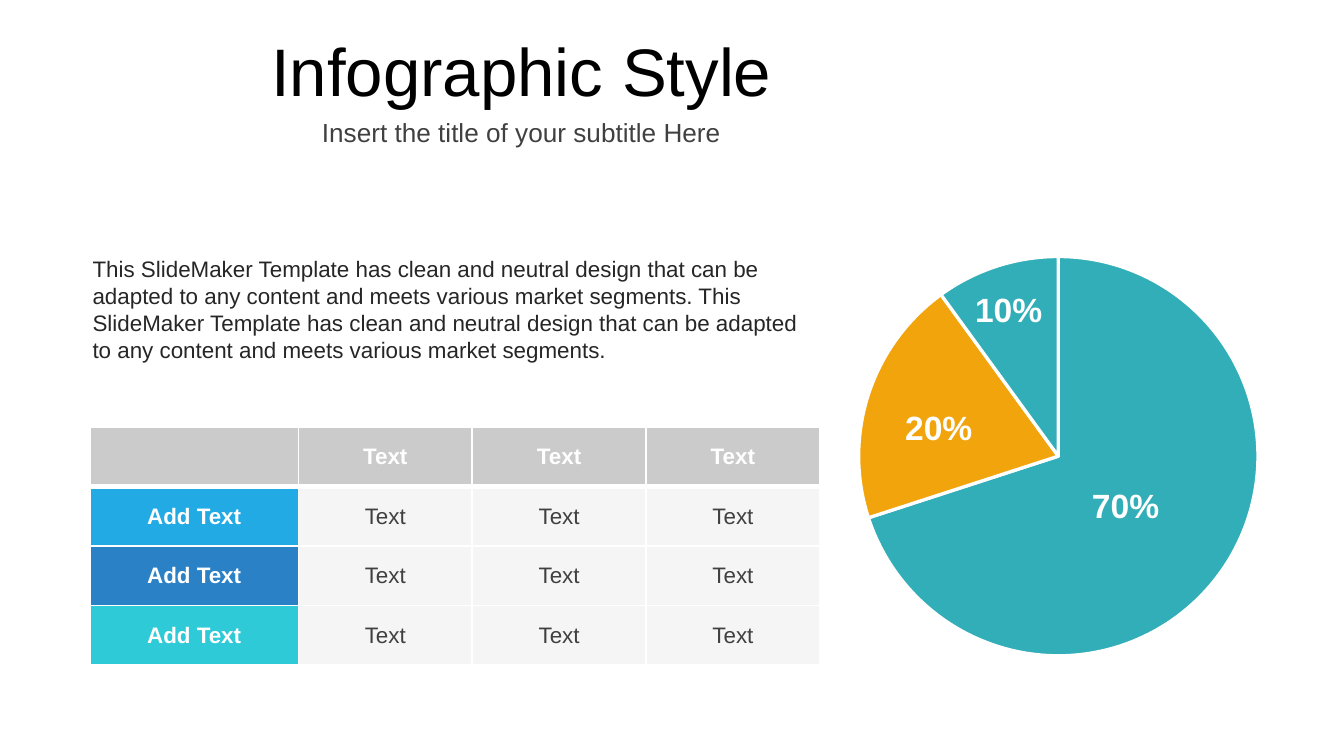
"""Build an infographic slide with a heading, a paragraph, a table and a pie chart."""
from lxml import etree
from pptx import Presentation
from pptx.chart.data import CategoryChartData
from pptx.dml.color import RGBColor
from pptx.enum.chart import XL_CHART_TYPE
from pptx.enum.text import MSO_ANCHOR, MSO_AUTO_SIZE, PP_ALIGN
from pptx.oxml import parse_xml
from pptx.oxml.ns import nsdecls, qn
from pptx.util import Inches, Pt

CENTER, LEFT = PP_ALIGN.CENTER, PP_ALIGN.LEFT
MIDDLE, TOP = MSO_ANCHOR.MIDDLE, MSO_ANCHOR.TOP
NO_FIT = MSO_AUTO_SIZE.NONE
PIE = XL_CHART_TYPE.PIE

THEME = {
    "font": "Arial", "title": 36, "subtitle": 14, "body": 12, "label": 18,
    "black": "000000", "dark": "262626", "gray": "404040", "white": "FFFFFF",
    "header": "CBCBCB", "cell": "F5F5F5",
    "row_heads": ["22AAE4", "2A81C6", "2ECAD7"],
    "slices": ["32AEB8", "F2A40D", "32AEB8"],
}

TITLE = "Infographic Style"
SUBTITLE = "Insert the title of your subtitle Here"
SENTENCE = ("This SlideMaker Template has clean and neutral design that can be "
            "adapted to any content and meets various market segments.")
PARAGRAPH = f"{SENTENCE} {SENTENCE}"
TABLE = [["", "Text", "Text", "Text"]] + [["Add Text", "Text", "Text", "Text"]] * 3
SHARES = [70, 20, 10]
LABEL_PLACES = [(7.99, 3.56), (6.6, 2.98), (7.12, 2.1)]


def color(name):
    return RGBColor.from_string(THEME.get(name, name))


def write(frame, text, size, ink, bold=False, align=CENTER):
    frame.text = text
    para = frame.paragraphs[0]
    para.alignment = align
    for span in para.runs:
        span.font.name = THEME["font"]
        span.font.size = Pt(THEME[size])
        span.font.bold = bold
        span.font.color.rgb = color(ink)


def place(box, left, top, width, height, anchor=MIDDLE):
    box.left, box.top = Inches(left), Inches(top)
    box.width, box.height = Inches(width), Inches(height)
    frame = box.text_frame
    frame.word_wrap = True
    frame.auto_size = NO_FIT
    frame.vertical_anchor = anchor
    return frame


def add_text(page, left, top, width, height, anchor=MIDDLE):
    box = page.shapes.add_textbox(0, 0, 0, 0)
    return place(box, left, top, width, height, anchor)


def set_borders(cell, widths):
    properties = cell._tc.get_or_add_tcPr()
    for index, (side, points) in enumerate(widths.items()):
        line = etree.Element(qn(f"a:ln{side}"), w=str(Pt(points)))
        fill = etree.SubElement(line, qn("a:solidFill"))
        etree.SubElement(fill, qn("a:srgbClr"), val=THEME["white"])
        properties.insert(index, line)


def add_grid(page):
    width, height, head_width = 5.43, 1.77, 1.55
    widths = [head_width] + [(width - head_width) / 3] * 3
    grid = page.shapes.add_table(len(TABLE), len(widths), Inches(0.67), Inches(3.18),
                                 Inches(width), Inches(height)).table
    for column, column_width in zip(grid.columns, widths):
        column.width = Inches(column_width)
    for r, row in enumerate(TABLE):
        grid.rows[r].height = Inches(height / len(TABLE))
        for c, text in enumerate(row):
            cell = grid.cell(r, c)
            is_head = r == 0 or c == 0
            fill = "header" if r == 0 else THEME["row_heads"][r - 1] if c == 0 else "cell"
            cell.fill.solid()
            cell.fill.fore_color.rgb = color(fill)
            cell.vertical_anchor = MIDDLE
            write(cell.text_frame, text, "body", "white" if is_head else "gray", is_head)
            set_borders(cell, {"L": 1, "R": 1, "T": 3 if r == 1 else 1, "B": 3 if r == 0 else 1})


def add_pie(page):
    data = CategoryChartData()
    data.categories = ["1", "2", "3"]
    data.add_series("Series 1", SHARES)
    chart = page.shapes.add_chart(PIE, Inches(6.26), Inches(1.78),
                                  Inches(3.23), Inches(3.23), data).chart
    chart.has_legend = chart.has_title = False
    chart.font.name = THEME["font"]
    chart.font.size = Pt(THEME["label"])
    chart.font.color.rgb = color("black")
    plot = chart.plots[0]
    plot.vary_by_categories = False
    for index, ink in enumerate(THEME["slices"]):
        style = plot.series[0].points[index].format
        style.fill.solid()
        style.fill.fore_color.rgb = color(ink)
        style.line.color.rgb = color("white")
        style.line.width = Pt(1.75)
    area = chart._chartSpace.find(f".//{qn('c:plotArea')}")
    for layout in area.findall(qn("c:layout")):
        area.remove(layout)
    area.insert(0, parse_xml(
        f'<c:layout {nsdecls("c")}><c:manualLayout><c:layoutTarget val="inner"/>'
        '<c:xMode val="edge"/><c:yMode val="edge"/><c:x val="0.04"/><c:y val="0.04"/>'
        '<c:w val="0.92"/><c:h val="0.92"/></c:manualLayout></c:layout>'))


def main():
    deck = Presentation()
    deck.slide_width = Inches(10)
    deck.slide_height = deck.slide_width * 9 // 16
    page = deck.slides.add_slide(deck.slide_layouts[0])
    write(place(page.shapes.title, 0, 0.2, 7.76, 0.63), TITLE, "title", "black")
    write(place(page.placeholders[1], 0, 0.83, 7.76, 0.31), SUBTITLE, "subtitle", "gray")
    add_pie(page)
    add_grid(page)
    for share, (left, top) in zip(SHARES, LABEL_PLACES):
        write(add_text(page, left, top, 0.77, 0.4), f"{share}%", "label", "white", True)
    body = add_text(page, 0.59, 1.85, 5.59, 0.91, TOP)
    write(body, PARAGRAPH, "body", "dark", align=LEFT)
    deck.save("out.pptx")


if __name__ == "__main__":
    main()
